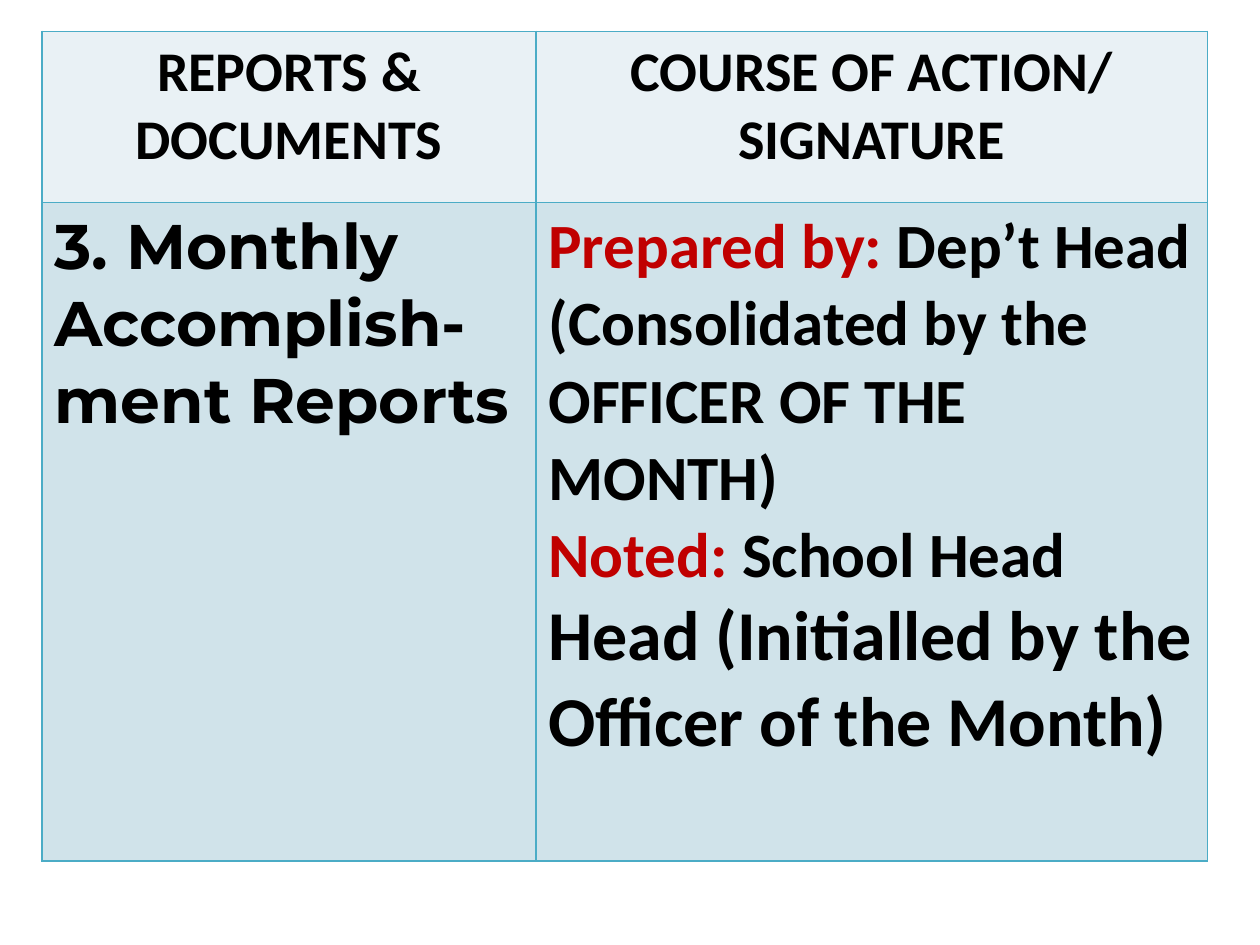
import pptx
import pptx.dml.color
import pptx.enum.text
import pptx.oxml
import pptx.oxml.ns
import pptx.util

FONT, ACCENT_FONT = "Calibri", "Montserrat"
BLACK, RED, BORDER = "000000", "C00000", "4BACC6"
HEADER_FILL, BODY_FILL = "E9F1F5", "D0E3EA"


def color(value):
    return pptx.dml.color.RGBColor.from_string(value)


class Deck:
    """Holds the style and the current slide."""

    def __init__(self, width, height):
        self.prs = pptx.Presentation()
        self.prs.slide_width = pptx.util.Inches(width)
        self.prs.slide_height = pptx.util.Inches(height)
        self.s = self.prs.slides.add_slide(self.prs.slide_layouts[6])

    def x(self, share):
        return round(self.prs.slide_width * share / 100)

    def y(self, share):
        return round(self.prs.slide_height * share / 100)

    def table(self, left, top, cols, rows):
        """Add a table; all lengths are percentages of the slide."""
        frame = self.s.shapes.add_table(
            len(rows), len(cols), self.x(left), self.y(top),
            self.x(sum(cols)), self.y(sum(rows)))
        table = frame.table
        for col, width in zip(table.columns, cols):
            col.width = self.x(width)
        for row, height in zip(table.rows, rows):
            row.height = self.y(height)
        return table

    def borders(self, cell):
        tcPr = cell._tc.get_or_add_tcPr()
        ns = pptx.oxml.ns.nsdecls("a")
        for i, side in enumerate(("lnL", "lnR", "lnT", "lnB")):
            tcPr.insert(i, pptx.oxml.parse_xml(
                f'<a:{side} {ns} w="12700"><a:solidFill>'
                f'<a:srgbClr val="{BORDER}"/></a:solidFill></a:{side}>'))

    def cell(self, cell, paragraphs, fill, align="LEFT"):
        """Fill a cell; a run is (text, size, colour, font)."""
        cell.fill.solid()
        cell.fill.fore_color.rgb = color(fill)
        self.borders(cell)
        tf = cell.text_frame
        for i, runs in enumerate(paragraphs):
            p = tf.add_paragraph() if i else tf.paragraphs[0]
            p.alignment = getattr(pptx.enum.text.PP_ALIGN, align)
            for text, size, rgb, font in runs:
                r = p.add_run()
                r.text = text
                r.font.size = pptx.util.Pt(size)
                r.font.bold = True
                r.font.name = font
                r.font.color.rgb = color(rgb)


def main():
    deck = Deck(10, 7.5)
    table = deck.table(3.33, 3.33, cols=(39.2, 53.3), rows=(18.1, 69.7))

    # Header row
    headers = ("REPORTS & DOCUMENTS", "COURSE OF ACTION/ SIGNATURE")
    for i, text in enumerate(headers):
        deck.cell(table.cell(0, i), [[(text, 32, BLACK, FONT)]],
                  HEADER_FILL, "CENTER")

    # Report name
    report = "3. Monthly Accomplish-ment Reports"
    deck.cell(table.cell(1, 0), [[(report, 36, BLACK, ACCENT_FONT)]], BODY_FILL)

    # Course of action
    actions = [
        [("Prepared by: ", 36, RED, FONT), ("Dep’t Head", 36, BLACK, FONT)],
        [("(Consolidated by the OFFICER OF THE MONTH)", 36, BLACK, FONT)],
        [("Noted: ", 36, RED, FONT), ("School Head", 36, BLACK, FONT)],
        [("Head (Initialled by the Officer of the Month)", 40, BLACK, FONT)],
    ]
    deck.cell(table.cell(1, 1), actions, BODY_FILL)

    deck.prs.save("out.pptx")


if __name__ == "__main__":
    main()
